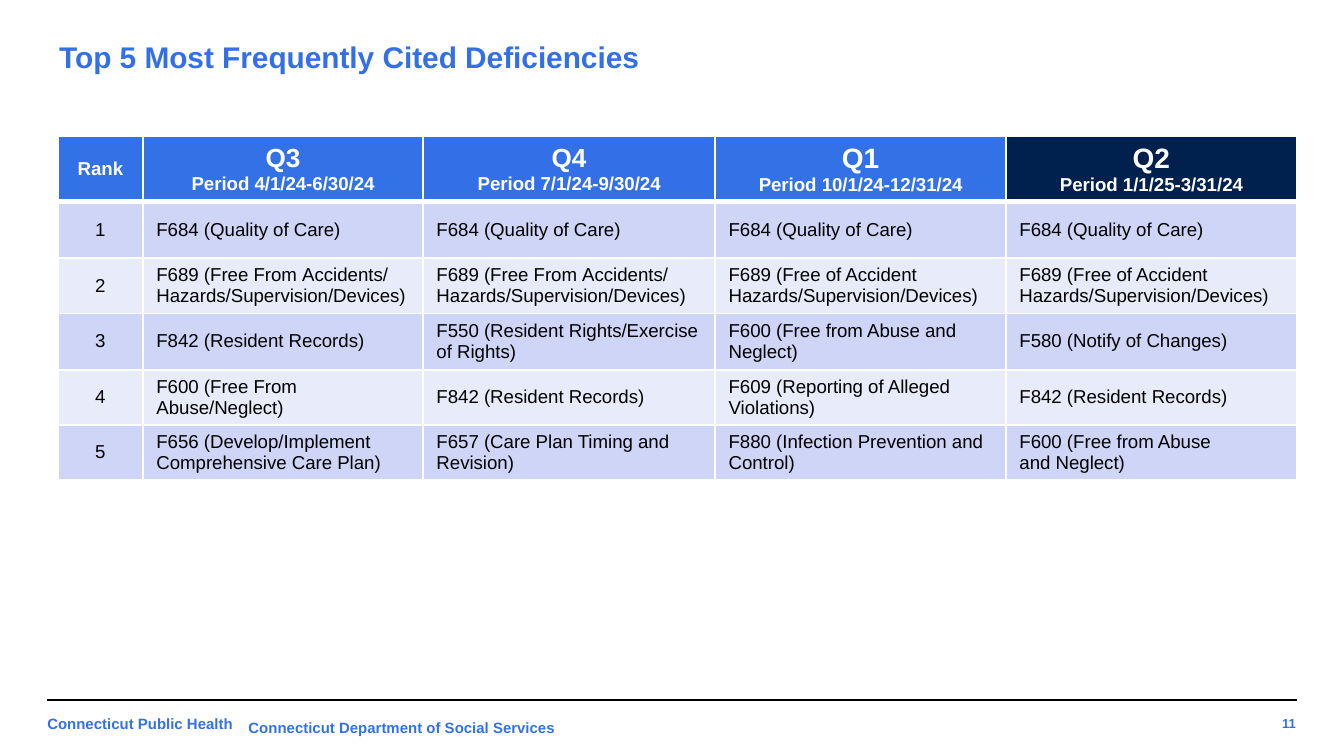
from dataclasses import dataclass

from lxml.etree import SubElement
from pptx import Presentation
from pptx.dml.color import RGBColor
from pptx.enum.shapes import MSO_CONNECTOR
from pptx.enum.text import MSO_ANCHOR, PP_ALIGN
from pptx.oxml.ns import qn
from pptx.util import Inches, Pt


@dataclass(frozen=True)
class Theme:
    font: str = "Arial"
    blue: str = "3371E7"
    title_blue: str = "3370E8"
    navy: str = "00214D"
    white: str = "FFFFFF"
    black: str = "000000"
    bands: tuple = ("CED5F6", "E8EBFA")
    title_size: int = 16
    body_size: int = 10
    footer_size: int = 8
    number_size: int = 7


THEME = Theme()


def write(frame, text, size=THEME.body_size, color=THEME.black, bold=False,
          align=PP_ALIGN.LEFT, first_size=None):
    """Fill a text frame, one paragraph per line of text."""
    frame.text = text
    for index, paragraph in enumerate(frame.paragraphs):
        paragraph.alignment = align
        for run in paragraph.runs:
            font = run.font
            font.name, font.bold = THEME.font, bold
            font.size = Pt(first_size if first_size and index == 0 else size)
            font.color.rgb = RGBColor.from_string(color)


class SlideBuilder:
    """Places elements on a grid of square units, 100 columns wide."""

    def __init__(self, deck, theme):
        self.theme = theme
        self.unit = deck.slide_width / 100
        self.slide = deck.slides.add_slide(deck.slide_layouts[5])

    def grid(self, *cells):
        return [round(cell * self.unit) for cell in cells]

    def inset(self, frame, rows):
        frame.margin_left = frame.margin_right = self.grid(1)[0]
        frame.margin_top = frame.margin_bottom = self.grid(rows)[0]

    def title(self, text, place):
        heading = self.slide.shapes.title
        heading.left, heading.top, heading.width, heading.height = self.grid(*place)
        frame = heading.text_frame
        self.inset(frame, 1)
        frame.vertical_anchor = MSO_ANCHOR.MIDDLE
        write(frame, text, size=self.theme.title_size,
              color=self.theme.title_blue, bold=True)

    def label(self, text, place, inset=1, wrap=True, anchor=MSO_ANCHOR.TOP, **style):
        frame = self.slide.shapes.add_textbox(*self.grid(*place)).text_frame
        self.inset(frame, inset)
        frame.word_wrap, frame.vertical_anchor = wrap, anchor
        write(frame, text, color=self.theme.blue, bold=True, **style)

    def rule(self, start, end):
        line = self.slide.shapes.add_connector(
            MSO_CONNECTOR.STRAIGHT, *self.grid(*start, *end))
        line.line.color.rgb = RGBColor.from_string(self.theme.black)
        line.line.width = Pt(0.75)
        SubElement(line._element.spPr, qn("a:effectLst"))

    def borders(self, cell, bottom):
        properties = cell._tc.get_or_add_tcPr()
        for position, side in enumerate(("lnL", "lnR", "lnT", "lnB")):
            width = Pt(bottom if side == "lnB" else 1)
            edge = SubElement(properties, qn(f"a:{side}"), w=str(width))
            fill = SubElement(edge, qn("a:solidFill"))
            SubElement(fill, qn("a:srgbClr"), val=self.theme.white)
            properties.insert(position, edge)

    def cell(self, cell, text, fill, bottom=1, **style):
        cell.fill.solid()
        cell.fill.fore_color.rgb = RGBColor.from_string(fill)
        cell.vertical_anchor = MSO_ANCHOR.MIDDLE
        write(cell.text_frame, text, **style)
        self.borders(cell, bottom)

    def ranking(self, origin, columns, rows, quarters, findings):
        theme = self.theme
        table = self.slide.shapes.add_table(
            len(rows), len(columns),
            *self.grid(*origin, sum(columns), sum(rows))).table
        for column, width in zip(table.columns, self.grid(*columns)):
            column.width = width
        for row, height in zip(table.rows, self.grid(*rows)):
            row.height = height

        # Header row, with the latest quarter in navy
        heads = [("Rank", None, theme.blue)] + quarters
        for column, (text, first_size, fill) in enumerate(heads):
            self.cell(table.cell(0, column), text, fill, bottom=3, color=theme.white,
                      bold=True, align=PP_ALIGN.CENTER, first_size=first_size)

        # Banded ranks
        for rank, deficiencies in enumerate(findings, start=1):
            band = theme.bands[(rank - 1) % 2]
            for column, text in enumerate((str(rank), *deficiencies)):
                align = PP_ALIGN.LEFT if column else PP_ALIGN.CENTER
                self.cell(table.cell(rank, column), text, band, align=align)


QUARTERS = [
    ("Q3\nPeriod 4/1/24-6/30/24", 14, THEME.blue),
    ("Q4\nPeriod 7/1/24-9/30/24", 14, THEME.title_blue),
    ("Q1\nPeriod 10/1/24-12/31/24", 15, THEME.blue),
    ("Q2\nPeriod 1/1/25-3/31/24", 15, THEME.navy),
]
HARD_SPACE = chr(160)  # keeps two words on one line
QUALITY = "F684 (Quality of Care)"
RECORDS = "F842 (Resident Records)"
FREE_FROM_ACCIDENTS = (
    f"F689 (Free From{HARD_SPACE}Accidents/ Hazards/Supervision/Devices)")
FREE_OF_ACCIDENT = "F689 (Free of Accident Hazards/Supervision/Devices)"
FINDINGS = [
    (QUALITY,) * 4,
    (FREE_FROM_ACCIDENTS,) * 2 + (FREE_OF_ACCIDENT,) * 2,
    (RECORDS, "F550 (Resident Rights/Exercise of Rights)",
     "F600 (Free from Abuse and Neglect)", "F580 (Notify of Changes)"),
    ("F600 (Free From Abuse/Neglect)", RECORDS,
     "F609 (Reporting of Alleged Violations)", RECORDS),
    (f"F656 (Develop/Implement{HARD_SPACE}\nComprehensive Care Plan)",
     "F657 (Care Plan Timing and Revision)",
     "F880 (Infection Prevention and Control)",
     f"F600 (Free from Abuse and{HARD_SPACE}Neglect)"),
]


def main():
    deck = Presentation()
    deck.slide_width = Inches(10)
    deck.slide_height = deck.slide_width * 9 // 16
    page = SlideBuilder(deck, THEME)

    # Title and ranking
    page.title("Top 5 Most Frequently Cited Deficiencies", (3.4, 2.6, 93.2, 3.3))
    page.ranking((4.3, 10.14), (6.34, 20.84, 21.74, 21.64, 21.64),
                 (4.8, 4.2, 4.1, 4.2, 4.1, 4.1), QUARTERS, FINDINGS)

    # Footer
    page.rule((96.5, 52.08), (3.5, 52.08))
    page.label("Connecticut Public Health", (2.53, 52.5, 32.8, 3.4),
               size=THEME.footer_size)
    page.label("Connecticut Department of Social Services", (17.5, 53, 25.1, 2.4),
               inset=0.5, wrap=False, size=THEME.footer_size)
    page.label("11", (91.4, 52.6, 6, 2.5), anchor=MSO_ANCHOR.MIDDLE,
               size=THEME.number_size, align=PP_ALIGN.RIGHT)

    deck.save("out.pptx")


if __name__ == "__main__":
    main()
